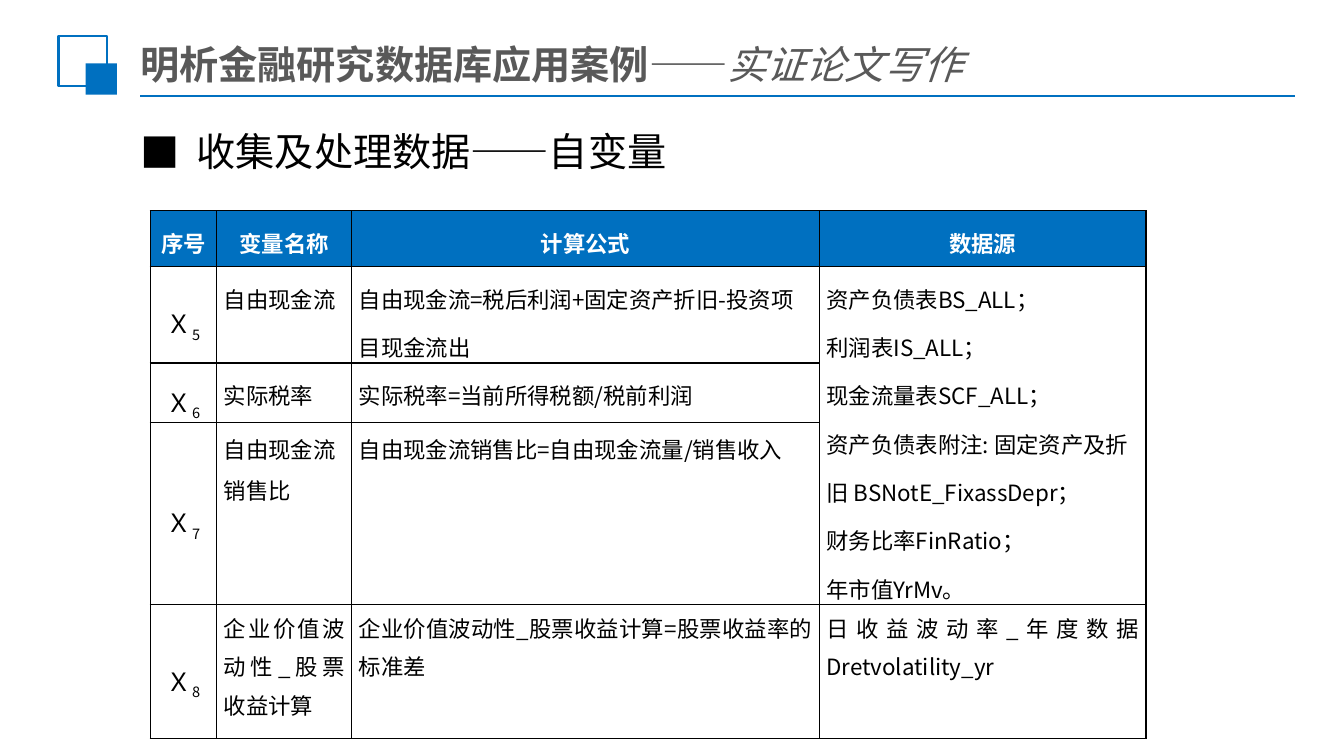
"""Builds the slide on collecting and processing data for the independent variables."""
from lxml import etree
from pptx import Presentation
from pptx.dml.color import RGBColor
from pptx.enum.shapes import MSO_CONNECTOR, MSO_SHAPE
from pptx.enum.text import MSO_ANCHOR, MSO_AUTO_SIZE, PP_ALIGN
from pptx.oxml.ns import qn
from pptx.util import Inches, Pt

RECTANGLE = MSO_SHAPE.RECTANGLE
STRAIGHT = MSO_CONNECTOR.STRAIGHT
TOP, MIDDLE = MSO_ANCHOR.TOP, MSO_ANCHOR.MIDDLE
LEFT, CENTER, JUSTIFY = PP_ALIGN.LEFT, PP_ALIGN.CENTER, PP_ALIGN.JUSTIFY
NO_AUTOFIT = MSO_AUTO_SIZE.NONE

COLORS = {"blue": "0070C0", "gray": "595959", "black": "000000", "white": "FFFFFF"}
FONT = "Noto Sans CJK SC"
GRID_COLUMNS, GRID_ROWS = 40, 30

TITLE_RUNS = [
    ("明析金融研究数据库应用案例", {"bold": True}),
    ("——", {}),
    ("实证论文写作", {"italic": True}),
]
HEADING = "收集及处理数据——自变量"
COLUMN_WIDTHS = [1.98, 4.02, 13.92, 9.72]
ROW_HEIGHTS = [2.2, 3.32, 2.12, 6.2, 5.32]
HEADERS = ["序号", "变量名称", "计算公式", "数据源"]
VARIABLES = [
    ("5", "自由现金流", "自由现金流=税后利润+固定资产折旧-投资项目现金流出", LEFT, 1.5),
    ("6", "实际税率", "实际税率=当前所得税额/税前利润", LEFT, 1.5),
    ("7", "自由现金流销售比", "自由现金流销售比=自由现金流量/销售收入", LEFT, 1.3),
    ("8", "企业价值波动性_股票收益计算",
     "企业价值波动性_股票收益计算=股票收益率的标准差", JUSTIFY, 1.2),
]
SHARED_SOURCES = [
    "资产负债表BS_ALL；",
    "利润表IS_ALL；",
    "现金流量表SCF_ALL；",
    "资产负债表附注: 固定资产及折旧 BSNotE_FixassDepr；",
    "财务比率FinRatio；",
    "年市值YrMv。",
]
VOLATILITY_SOURCE = "日收益波动率_年度数据Dretvolatility_yr"


class SlideBuilder:
    """Holds the grid, the style and the current slide."""

    def __init__(self, presentation):
        self.column = presentation.slide_width / GRID_COLUMNS
        self.row = presentation.slide_height / GRID_ROWS
        self.slide = presentation.slides.add_slide(presentation.slide_layouts[1])

    def box(self, left, top, width, height):
        """Turns grid units into slide lengths."""
        return (round(left * self.column), round(top * self.row),
                round(width * self.column), round(height * self.row))

    def color(self, name):
        """Looks up a named colour."""
        return RGBColor.from_string(COLORS[name])

    def text_run(self, paragraph, text, size, color, bold=False, italic=False, baseline=0):
        """Adds one styled run."""
        run = paragraph.add_run()
        run.text = text
        font = run.font
        font.size, font.name, font.bold, font.italic = Pt(size), FONT, bold, italic
        font.color.rgb = self.color(color)
        properties = run._r.get_or_add_rPr()
        etree.SubElement(properties, qn("a:ea")).set("typeface", FONT)
        if baseline:
            properties.set("baseline", str(baseline * 1000))

    def square(self, box, fill=None, line=None):
        """Draws a rectangle with a fill or an outline."""
        shape = self.slide.shapes.add_shape(RECTANGLE, *self.box(*box))
        shape.shadow.inherit = False
        if fill:
            shape.fill.solid()
            shape.fill.fore_color.rgb = self.color(fill)
        else:
            shape.fill.background()
        if line:
            shape.line.color.rgb = self.color(line)
            shape.line.width = Pt(1.5)
        else:
            shape.line.fill.background()

    def rule(self, left, right, top, color):
        """Draws a horizontal line."""
        x, y, width, _ = self.box(left, top, right - left, 0)
        connector = self.slide.shapes.add_connector(STRAIGHT, x, y, x + width, y)
        connector.line.color.rgb = self.color(color)
        connector.line.width = Pt(1.25)
        etree.SubElement(connector._element.spPr, qn("a:effectLst"))

    def placeholder(self, shape, box, anchor):
        """Places a template placeholder and returns its first paragraph."""
        shape.left, shape.top, shape.width, shape.height = self.box(*box)
        frame = shape.text_frame
        frame.word_wrap, frame.auto_size = True, NO_AUTOFIT
        frame.vertical_anchor = anchor
        frame.margin_left = frame.margin_right = Inches(0.07)
        frame.margin_top = frame.margin_bottom = Inches(0.04)
        paragraph = frame.paragraphs[0]
        paragraph.alignment = LEFT
        paragraph.space_before = Pt(0)
        return paragraph

    def title(self, box, runs):
        """Fills the title placeholder."""
        paragraph = self.placeholder(self.slide.shapes.title, box, MIDDLE)
        for text, style in runs:
            self.text_run(paragraph, text, 28, "gray", **style)

    def heading(self, box, text):
        """Fills the body placeholder with a square-bulleted heading."""
        paragraph = self.placeholder(self.slide.placeholders[1], box, TOP)
        properties = paragraph._p.get_or_add_pPr()
        properties.set("marL", str(Inches(0.56)))
        properties.set("indent", str(-Inches(0.56)))
        etree.SubElement(properties, qn("a:buFont")).set("typeface", FONT)
        etree.SubElement(properties, qn("a:buChar")).set("char", "■")
        self.text_run(paragraph, text, 28, "black")

    def table(self, left, top, widths, heights):
        """Adds an empty table with black borders."""
        box = self.box(left, top, sum(widths), sum(heights))
        table = self.slide.shapes.add_table(len(heights), len(widths), *box).table
        table.horz_banding = False
        for column, width in zip(table.columns, widths):
            column.width = round(width * self.column)
        for row, height in zip(table.rows, heights):
            row.height = round(height * self.row)
        for cell in table.iter_cells():
            cell.margin_left = cell.margin_right = Inches(0.07)
            cell.margin_top = cell.margin_bottom = 0
            cell.fill.background()
            self.border(cell)
        return table

    def border(self, cell):
        """Outlines all four sides of a cell."""
        properties = cell._tc.get_or_add_tcPr()
        for index, side in enumerate(("a:lnL", "a:lnR", "a:lnT", "a:lnB")):
            line = etree.Element(qn(side), w=str(Pt(1)))
            fill = etree.SubElement(line, qn("a:solidFill"))
            etree.SubElement(fill, qn("a:srgbClr")).set("val", COLORS["black"])
            properties.insert(index, line)

    def cell_paragraphs(self, cell, count, alignment, spacing):
        """Prepares the paragraphs of a cell."""
        frame = cell.text_frame
        for _ in range(count - 1):
            frame.add_paragraph()
        for paragraph in frame.paragraphs:
            paragraph.alignment, paragraph.line_spacing = alignment, spacing
        return frame.paragraphs

    def cell_text(self, cell, lines, alignment=LEFT, spacing=1.5, color="black", bold=False):
        """Fills a cell with one paragraph per line."""
        paragraphs = self.cell_paragraphs(cell, len(lines), alignment, spacing)
        for paragraph, line in zip(paragraphs, lines):
            self.text_run(paragraph, line, 16, color, bold)

    def header_cell(self, cell, text):
        """Sets a header on a blue fill."""
        cell.fill.solid()
        cell.fill.fore_color.rgb = self.color("blue")
        self.cell_text(cell, [text], CENTER, color="white", bold=True)

    def symbol_cell(self, cell, subscript):
        """Sets a variable symbol with its subscript."""
        cell.vertical_anchor = MIDDLE
        paragraph = self.cell_paragraphs(cell, 1, CENTER, 1.5)[0]
        self.text_run(paragraph, "Ｘ", 18, "black")
        self.text_run(paragraph, subscript, 18, "black", baseline=-25)


def main():
    """Builds and saves the presentation."""
    presentation = Presentation()
    presentation.slide_width, presentation.slide_height = Inches(13.33), Inches(7.5)
    builder = SlideBuilder(presentation)
    builder.rule(4.17, 38.55, 3.8, "blue")
    builder.square((1.74, 1.44, 1.44, 1.96), line="blue")
    builder.square((2.55, 2.52, 0.93, 1.24), fill="blue")
    builder.title((3.96, 1.56, 25.8, 1.92), TITLE_RUNS)
    builder.heading((3.96, 4.88, 28.02, 3.88), HEADING)

    table = builder.table(4.47, 8.36, COLUMN_WIDTHS, ROW_HEIGHTS)
    for column, header in enumerate(HEADERS):
        builder.header_cell(table.cell(0, column), header)
    for row, (subscript, name, formula, alignment, spacing) in enumerate(VARIABLES, 1):
        builder.symbol_cell(table.cell(row, 0), subscript)
        builder.cell_text(table.cell(row, 1), [name], alignment, spacing)
        builder.cell_text(table.cell(row, 2), [formula], alignment, spacing)
    table.cell(1, 3).merge(table.cell(3, 3))
    builder.cell_text(table.cell(1, 3), SHARED_SOURCES)
    builder.cell_text(table.cell(4, 3), [VOLATILITY_SOURCE], JUSTIFY, 1.2)
    presentation.save("out.pptx")


if __name__ == "__main__":
    main()
